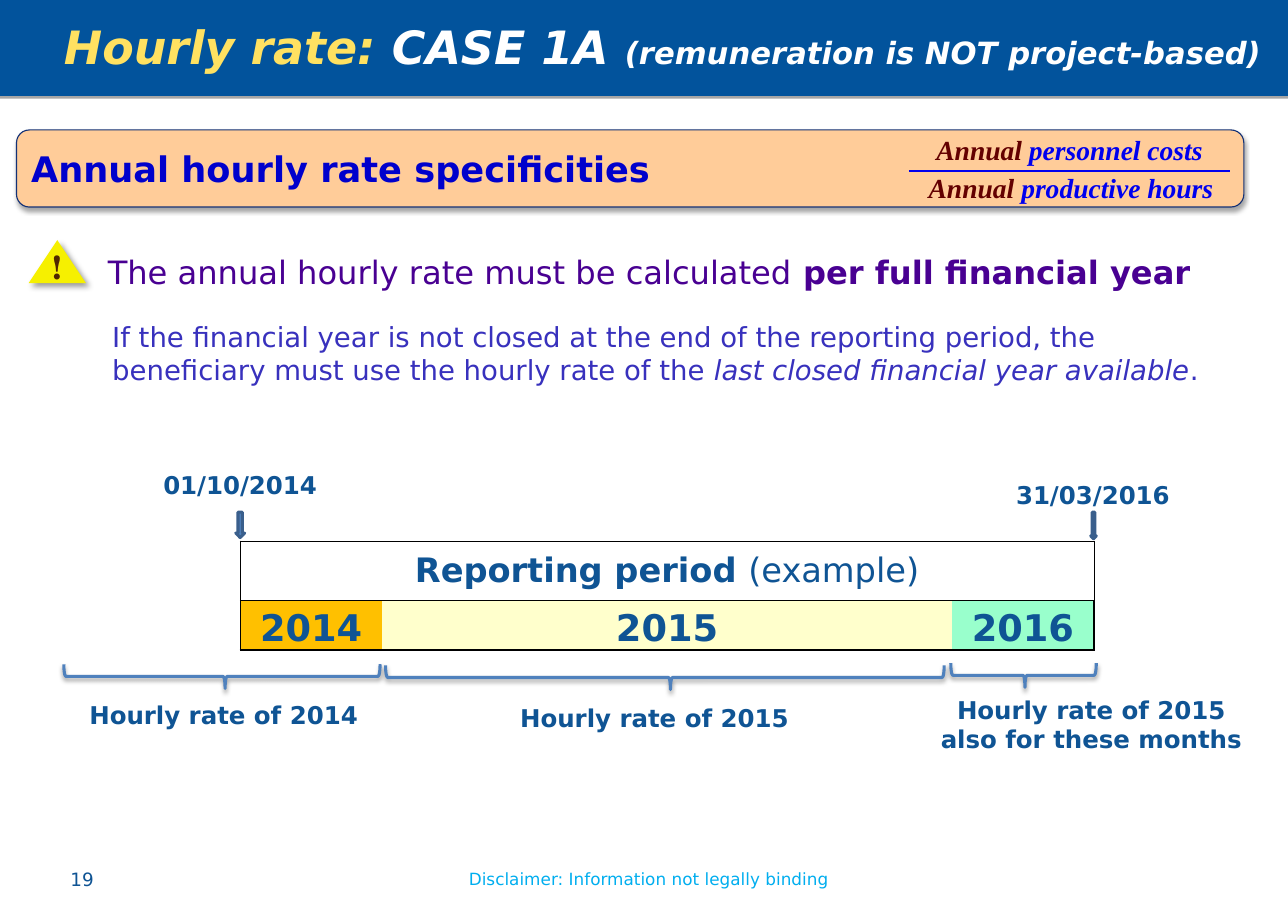
from lxml import etree
from pptx import Presentation, util as u
from pptx.dml.color import RGBColor
from pptx.enum import shapes, text
from pptx.oxml import ns

COLORS = {
    "bar": "02539C", "yellow": "FFE161", "white": "FFFFFF", "navy": "0F5494",
    "sky": "00AEEF", "peach": "FFCC99", "edge": "133176", "blue": "0000CC",
    "formula": "0000EE", "maroon": "640000", "purple": "490092", "violet": "3831BD",
    "sign": "F6F000", "brown": "502800", "arrow": "4F81BD", "arrow_edge": "3A5F8C",
    "black": "000000", "gold": "FFC000", "cream": "FFFFCC", "mint": "99FFCC",
}
SANS, SERIF, SIGN_FONT = "DejaVu Sans", "Times New Roman", "TeX Gyre Schola"
LEFT, CENTER = text.PP_ALIGN.LEFT, text.PP_ALIGN.CENTER
MIDDLE, BOTTOM = text.MSO_ANCHOR.MIDDLE, text.MSO_ANCHOR.BOTTOM
KIND = shapes.MSO_SHAPE


def rgb(name):
    return RGBColor.from_string(COLORS[name])


def style(target, values):
    for key, value in values.items():
        setattr(target, key, value)


def margins(*sizes):
    names = ("margin_left", "margin_top", "margin_right", "margin_bottom")
    return {name: u.Inches(size) for name, size in zip(names, sizes)}


class SlideBuilder:
    def __init__(self, s):
        self.s = s

    def paragraph(self, p, runs, size, color="navy", align=LEFT, indent=0, before=0, **font):
        style(p, {"alignment": align, "space_before": u.Pt(before)})
        p._p.get_or_add_pPr().set("marL", str(u.Inches(indent)))
        base = {"size": u.Pt(size), "name": SANS, **font}
        for words, changes in runs:
            r = p.add_run()
            r.text = words
            changes = dict(changes)
            r.font.color.rgb = rgb(changes.pop("color", color))
            style(r.font, {**base, **changes})

    def textbox(self, box, runs, size, **font):
        tf = self.s.shapes.add_textbox(*map(u.Inches, box)).text_frame
        tf.word_wrap = True
        self.paragraph(tf.paragraphs[0], runs, size, **font)
        return tf

    def label(self, box, words):
        self.textbox(box, [(words, {})], 16, align=CENTER, bold=True)

    def shape(self, kind, box, fill=None, line=None, width=1.0, shadow=None):
        sp = self.s.shapes.add_shape(kind, *map(u.Inches, box))
        if fill:
            sp.fill.solid()
            sp.fill.fore_color.rgb = rgb(fill)
        else:
            sp.fill.background()
        if line:
            sp.line.color.rgb = rgb(line)
            sp.line.width = u.Pt(width)
        else:
            sp.line.fill.background()
        sp.shadow.inherit = False
        if shadow:
            self.shadow(sp, *shadow)
        return sp

    def shadow(self, sp, alpha, blur, dist, angle):
        effects = sp._element.spPr.find(ns.qn("a:effectLst"))
        outer = etree.SubElement(effects, ns.qn("a:outerShdw"), blurRad=str(u.Pt(blur)),
                                 dist=str(u.Pt(dist)), dir=str(angle * 60000), rotWithShape="0")
        clr = etree.SubElement(outer, ns.qn("a:srgbClr"), val=COLORS["black"])
        etree.SubElement(clr, ns.qn("a:alpha"), val=str(alpha * 1000))

    def brace(self, left, right, top):
        length, depth = right - left, 0.22
        box = ((left + right - depth) / 2, top + (depth - length) / 2, depth, length)
        sp = self.shape(KIND.LEFT_BRACE, box, line="arrow", width=2, shadow=(38, 3.1, 1.6, 90))
        sp.rotation = 270
        sp.adjustments[0], sp.adjustments[1] = 0.08, 0.51

    def line(self, x1, y1, x2, y2, color, width):
        cx = self.s.shapes.add_connector(shapes.MSO_CONNECTOR.STRAIGHT,
                                         *map(u.Inches, (x1, y1, x2, y2)))
        cx.line.color.rgb = rgb(color)
        cx.line.width = u.Pt(width)
        etree.SubElement(cx._element.spPr, ns.qn("a:effectLst"))

    def cell(self, cell, fill, sides, anchor):
        style(cell, {"vertical_anchor": anchor, **margins(0.01, 0.01, 0.01, 0)})
        tcPr = cell._tc.get_or_add_tcPr()
        for side in "LRTB":
            ln = etree.SubElement(tcPr, ns.qn("a:ln" + side), w=str(u.Pt(sides.get(side, 0))))
            if side in sides:
                solid = etree.SubElement(ln, ns.qn("a:solidFill"))
                etree.SubElement(solid, ns.qn("a:srgbClr"), val=COLORS["black"])
            else:
                etree.SubElement(ln, ns.qn("a:noFill"))
        cell.fill.solid()
        cell.fill.fore_color.rgb = rgb(fill)

    def period_table(self, box, widths, heights, header, years):
        table = self.s.shapes.add_table(2, 3, *map(u.Inches, box)).table
        style(table, {"first_row": False, "horz_banding": False})
        for column, width in zip(table.columns, widths):
            column.width = u.Inches(width)
        for row, height in zip(table.rows, heights):
            row.height = u.Inches(height)
        for i, (year, fill) in enumerate(years):
            outer = {0: {"L": 1}, 2: {"R": 1}}.get(i, {})
            self.cell(table.cell(0, i), "white", dict.fromkeys("LRTB", 0.5), MIDDLE)
            self.cell(table.cell(1, i), fill, {"T": 0.5, "B": 1, **outer}, BOTTOM)
            self.paragraph(table.cell(1, i).text_frame.paragraphs[0], [(year, {})], 24,
                           align=CENTER, bold=True)
        table.cell(0, 0).merge(table.cell(0, 2))
        self.paragraph(table.cell(0, 0).text_frame.paragraphs[0], header, 22, align=CENTER)


def main():
    prs = Presentation()
    style(prs, {"slide_width": u.Inches(11.69), "slide_height": u.Inches(8.27)})
    b = SlideBuilder(prs.slides.add_slide(prs.slide_layouts[6]))

    bar = b.shape(KIND.RECTANGLE, (-0.02, -0.04, 11.72, 0.91), "bar", shadow=(35, 0, 1.8, 90))
    style(bar.text_frame, {"vertical_anchor": MIDDLE, **margins(0.11, 0.06, 0.11, 0.06)})
    b.paragraph(bar.text_frame.paragraphs[0], [
        ("Hourly rate: ", {"color": "yellow"}),
        ("CASE 1A ", {}),
        ("(remuneration is NOT project-based)", {"size": u.Pt(20)}),
    ], 30, color="white", indent=0.49, bold=True, italic=True)

    banner = b.shape(KIND.FLOWCHART_ALTERNATE_PROCESS, (0.15, 1.18, 11.14, 0.7), "peach",
                     "edge", 0.75, (35, 3.1, 1.8, 90))
    banner.text_frame.vertical_anchor = MIDDLE
    b.paragraph(banner.text_frame.paragraphs[0], [("Annual hourly rate specificities", {})], 23,
                color="blue", bold=True)
    for box, words in (((8.4, 1.16, 3.09, 0.4), "personnel costs"),
                       ((8.33, 1.5, 2.99, 0.4), "productive hours")):
        b.textbox(box, [("Annual ", {"color": "maroon"}), (words, {})], 18,
                  color="formula", name=SERIF, bold=True, italic=True)
    b.line(8.25, 1.55, 11.16, 1.55, "formula", 1.5)

    sign = b.shape(KIND.ISOSCELES_TRIANGLE, (0.26, 2.18, 0.52, 0.39), "sign",
                   shadow=(40, 4, 3, 45))
    style(sign.text_frame, {"vertical_anchor": MIDDLE, "word_wrap": False,
                            **margins(0, 0, 0, 0.11)})
    b.paragraph(sign.text_frame.paragraphs[0], [("!", {})], 21, color="brown", align=CENTER,
                name=SIGN_FONT, bold=True)

    rule = b.textbox((0.33, 2.24, 10.95, 1.33), [
        ("The annual hourly rate must be calculated", {}),
        (" per full financial year", {"bold": True}),
    ], 21, color="purple", indent=0.55)
    b.paragraph(rule.add_paragraph(), [
        ("If the financial year is not closed at the end of the reporting period, the "
         "beneficiary must use the hourly rate of the ", {}),
        ("last closed financial year available", {"italic": True}),
        (".", {}),
    ], 18, color="violet", indent=0.59, before=19)

    b.label((1.23, 4.22, 1.9, 0.37), "01/10/2014")
    b.label((8.97, 4.31, 1.9, 0.37), "31/03/2016")
    for box in ((2.14, 4.65, 0.08, 0.23), (9.9, 4.65, 0.05, 0.24)):
        b.shape(KIND.DOWN_ARROW, box, "arrow", "arrow_edge", 2)

    b.period_table((2.18, 4.91, 7.75, 0.99), (1.29, 5.17, 1.29), (0.54, 0.45),
                   [("Reporting period ", {"bold": True}), ("(example)", {})],
                   [("2014", "gold"), ("2015", "cream"), ("2016", "mint")])

    for left, right, top in ((0.58, 3.45, 6.03), (3.5, 8.57, 6.04), (8.63, 9.95, 6.02)):
        b.brace(left, right, top)
    b.label((0.37, 6.31, 3.32, 0.37), "Hourly rate of 2014")
    b.label((4.28, 6.33, 3.32, 0.37), "Hourly rate of 2015")
    b.label((8.37, 6.26, 3.07, 0.64), "Hourly rate of 2015 also for these months")

    b.textbox((0.54, 7.83, 0.82, 0.3), [("19", {})], 12)
    b.textbox((4.04, 7.84, 3.7, 0.29), [("Disclaimer: Information not legally binding", {})],
              11, color="sky", align=CENTER)
    prs.save("out.pptx")


if __name__ == "__main__":
    main()
